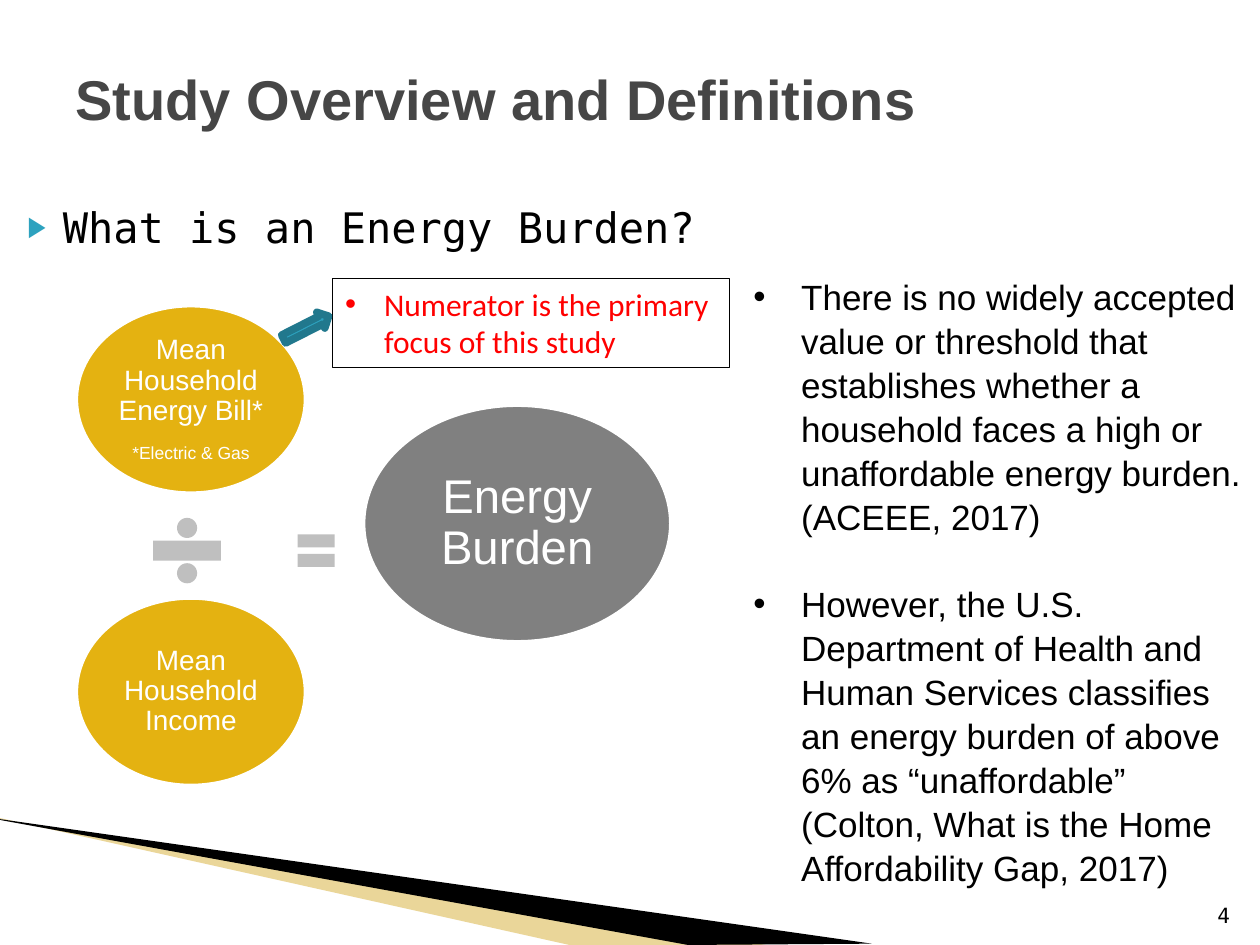
from lxml import etree
from pptx import Presentation
from pptx.dml.color import RGBColor
from pptx.enum.shapes import MSO_SHAPE as Shape
from pptx.enum.text import MSO_ANCHOR as Anchor, PP_ALIGN as Align
from pptx.oxml.ns import qn
from pptx.util import Inches, Pt

GOLD, GRAY, SILVER = "E4B211", "808080", "BFBFBF"
TEAL, DARK_TEAL = "2DA2BF", "21788D"
BLACK, WHITE, RED = "000000", "FFFFFF", "FF0000"
MONO = "DejaVu Sans Mono"


def color(hex_code):
    return RGBColor.from_string(hex_code)


def add_bullet(p, char, left, hang, bullet_color=None, percent=None):
    """Give a paragraph a hanging bullet."""
    pPr = p._p.get_or_add_pPr()
    pPr.set("marL", str(Inches(left)))
    pPr.set("indent", str(-Inches(hang)))
    if bullet_color:
        clr = etree.SubElement(pPr, qn("a:buClr"))
        etree.SubElement(clr, qn("a:srgbClr"), val=bullet_color)
    if percent:
        etree.SubElement(pPr, qn("a:buSzPct"), val=str(percent * 1000))
    etree.SubElement(pPr, qn("a:buFont"), typeface="Arial")
    etree.SubElement(pPr, qn("a:buChar"), char=char)


def add_text(tf, text, size=20, font="Arial", fill=BLACK, bold=False,
             align=Align.LEFT, spacing=None, before=0, after=0, bullet=None):
    """Add one formatted paragraph, using the empty first one if there is one."""
    p = tf.paragraphs[0]
    if p.runs:
        p = tf.add_paragraph()
    p.alignment = align
    p.space_before, p.space_after = Pt(before), Pt(after)
    if spacing:
        p.line_spacing = spacing
    if bullet:
        add_bullet(p, **bullet)
    r = p.add_run()
    r.text = text
    r.font.size, r.font.name, r.font.bold = Pt(size), font, bold
    r.font.color.rgb = color(fill)


def add_box(s, x, y, w, h, anchor=Anchor.TOP):
    box = s.shapes.add_textbox(Inches(x), Inches(y), Inches(w), Inches(h))
    tf = box.text_frame
    tf.word_wrap = True
    tf.vertical_anchor = anchor
    return tf


def style(sp, fill=None, line=None, width=1):
    sp.shadow.inherit = False
    if fill:
        sp.fill.solid()
        sp.fill.fore_color.rgb = color(fill)
    else:
        sp.fill.background()
    if line:
        sp.line.color.rgb = color(line)
        sp.line.width = Pt(width)
    else:
        sp.line.fill.background()


def add_shape(s, kind, x, y, w, h, **look):
    sp = s.shapes.add_shape(kind, Inches(x), Inches(y), Inches(w), Inches(h))
    style(sp, **look)
    return sp


def add_oval(s, x, y, w, h, fill):
    """Add a term of the formula and return its text frame."""
    sp = add_shape(s, Shape.OVAL, x, y, w, h, fill=fill, line=WHITE, width=4.33)
    tf = sp.text_frame
    tf.word_wrap = True
    tf.vertical_anchor = Anchor.MIDDLE
    tf.margin_left = tf.margin_right = tf.margin_top = tf.margin_bottom = Inches(0.02)
    return tf


def add_wedge(s, points, fill, alpha=None):
    start, *rest = [(Inches(x), Inches(y)) for x, y in points]
    builder = s.shapes.build_freeform(*start)
    builder.add_line_segments(rest, close=True)
    sp = builder.convert_to_shape()
    style(sp, fill=fill)
    if alpha:
        clr = sp.fill._xPr.find(qn("a:solidFill"))[0]
        etree.SubElement(clr, qn("a:alpha"), val=str(alpha * 1000))


def add_formula(s):
    """Energy bill divided by income equals energy burden."""
    term = dict(fill=WHITE, align=Align.CENTER, spacing=0.9)
    bill = add_oval(s, 0.59, 2.41, 1.85, 1.52, GOLD)
    add_text(bill, "Mean Household", size=16, **term)
    add_text(bill, "Energy Bill*", size=16, **term)
    add_text(bill, "*Electric & Gas", size=10, before=10, **term)

    add_shape(s, Shape.MATH_DIVIDE, 1.12, 4.03, 0.73, 0.68, fill=SILVER)

    income = add_oval(s, 0.59, 4.73, 1.85, 1.52, GOLD)
    add_text(income, "Mean Household Income", size=16, **term)

    add_shape(s, Shape.MATH_EQUAL, 2.31, 4.15, 0.4, 0.44, fill=SILVER)

    burden = add_oval(s, 2.87, 3.2, 2.47, 1.91, GRAY)
    add_text(burden, "Energy Burden", size=27, **term)


def add_callout(s):
    """Note on the numerator, with its arrow."""
    note = add_shape(s, Shape.RECTANGLE, 2.64, 2.21, 3.15, 0.71,
                     line=BLACK, width=0.75)
    tf = note.text_frame
    tf.word_wrap = True
    tf.vertical_anchor = Anchor.TOP
    add_text(tf, "Numerator is the primary focus of this study", size=18,
             font="Calibri", fill=RED, bullet=dict(char="•", left=0.31, hang=0.31))
    arrow = add_shape(s, Shape.RIGHT_ARROW, 2.23, 2.53, 0.4, 0.14,
                      fill=TEAL, line=DARK_TEAL, width=4.33)
    arrow.rotation = 333.1


def main():
    prs = Presentation()
    prs.slide_width, prs.slide_height = Inches(10), Inches(7.5)
    s = prs.slides.add_slide(prs.slide_layouts[5])

    # Title
    title = s.shapes.title
    title.left, title.top = Inches(0.5), Inches(0.3)
    title.width, title.height = Inches(9), Inches(0.95)
    title.text_frame.vertical_anchor = Anchor.MIDDLE
    add_text(title.text_frame, "Study Overview and Definitions",
             size=32, fill="464646", bold=True, after=12)

    # Corner wedges
    add_wedge(s, [(-0.01, 6.5), (6.08, 7.5), (4.52, 7.5), (-0.01, 6.49)],
              "CC9900", alpha=40)
    add_wedge(s, [(-0.01, 6.5), (6.92, 7.49), (5.46, 7.5), (0.01, 6.51)], BLACK)

    # Slide number
    add_text(add_box(s, 9.25, 7.01, 0.61, 0.4, Anchor.BOTTOM), "4",
             size=12, font=MONO, align=Align.RIGHT)

    # Question
    add_text(add_box(s, 0, 1.55, 9.7, 0.6), "What is an Energy Burden?",
             size=24, font=MONO, before=4,
             bullet=dict(char="▶", left=0.4, hang=0.28,
                         bullet_color=TEAL, percent=68))

    add_formula(s)

    # Thresholds
    thresholds = add_box(s, 5.88, 2.12, 4.12, 4.81)
    point = dict(spacing=1.05, bullet=dict(char="•", left=0.38, hang=0.38))
    add_text(thresholds, "There is no widely accepted value or threshold that "
             "establishes whether a household faces a high or unaffordable "
             "energy burden. (ACEEE, 2017)", **point)
    add_text(thresholds, "However, the U.S. Department of Health and Human "
             "Services classifies an energy burden of above 6% as "
             "“unaffordable” (Colton, What is the Home Affordability Gap, 2017)",
             before=24, **point)

    add_callout(s)
    prs.save("out.pptx")


if __name__ == "__main__":
    main()
